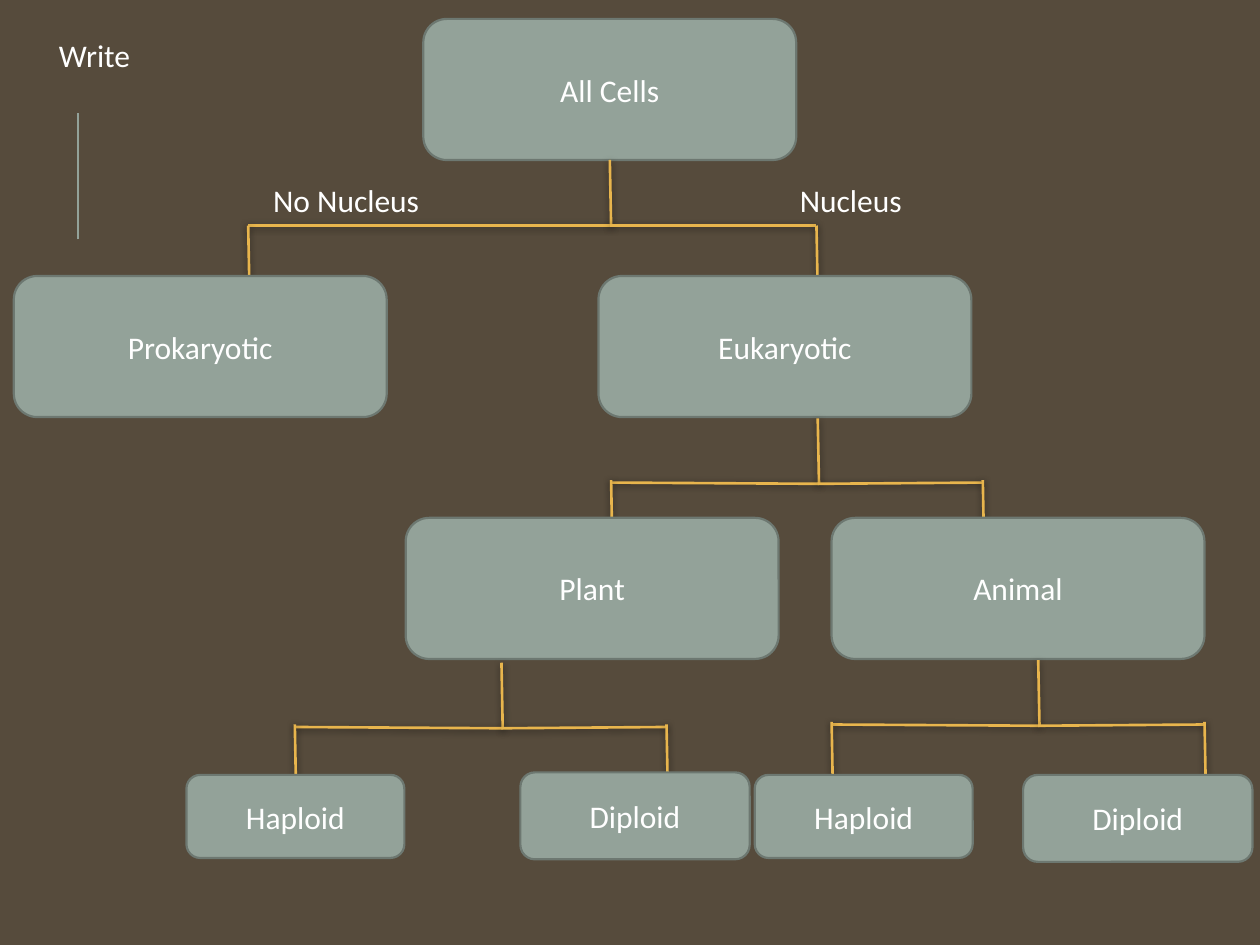
from lxml.etree import SubElement
from pptx import Presentation
from pptx.dml.color import RGBColor
from pptx.enum.shapes import MSO_CONNECTOR as CONN, MSO_SHAPE as SHAPE
from pptx.enum.text import MSO_ANCHOR as ANCHOR, MSO_AUTO_SIZE as FIT, PP_ALIGN as ALIGN
from pptx.oxml.ns import qn
from pptx.util import Inches, Pt

COLORS = {
    "background": "564B3C",
    "box": "93A299",
    "border": "6D7871",
    "branch": "E8B54D",
    "text": "FFFFFF",
    "shadow": "000000",
}
STEM = 0.52
LEAN = 0.01


def rgb(name):
    return RGBColor.from_string(COLORS[name])


def add_text(tf, text):
    p = tf.paragraphs[0]
    r = p.add_run()
    r.text = text
    r.font.name = "Calibri"
    r.font.size = Pt(18)
    r.font.color.rgb = rgb("text")
    return p


def add_box(s, text, left, top, width=2.96, height=1.12):
    sp = s.shapes.add_shape(SHAPE.ROUNDED_RECTANGLE, Inches(left), Inches(top),
                            Inches(width), Inches(height))
    sp.shadow.inherit = False
    sp.fill.solid()
    sp.fill.fore_color.rgb = rgb("box")
    sp.line.color.rgb = rgb("border")
    sp.line.width = Pt(1.25)
    tf = sp.text_frame
    tf.word_wrap = True
    tf.vertical_anchor = ANCHOR.MIDDLE
    add_text(tf, text).alignment = ALIGN.CENTER
    return sp


def add_label(s, text, left, top, width):
    tf = s.shapes.add_textbox(Inches(left), Inches(top), Inches(width), Inches(0.4)).text_frame
    tf.word_wrap = True
    tf.auto_size = FIT.SHAPE_TO_FIT_TEXT
    add_text(tf, text)


def add_line(s, start, end, color="branch", shadow=True):
    line = s.shapes.add_connector(CONN.STRAIGHT, *map(Inches, start + end))
    line.line.color.rgb = rgb(color)
    line.line.width = Pt(1.5)
    effects = SubElement(line._element.spPr, qn("a:effectLst"))
    if shadow:
        outer = SubElement(effects, qn("a:outerShdw"), blurRad=str(Pt(4)),
                           dist=str(Pt(1)), dir="5400000", rotWithShape="0")
        tint = SubElement(outer, qn("a:srgbClr"), val=COLORS["shadow"])
        SubElement(tint, qn("a:alpha"), val="50000")
    return line


def add_branch(s, x, y, left, right, sag=0.01, lift=0.03):
    """Draw a stem down from (x, y), a bar to each side and a drop at each end."""
    bar = y + STEM
    stem = add_line(s, (x, y), (x + LEAN, bar))
    add_line(s, (x + LEAN, bar), (left, bar - sag))
    add_line(s, (right, bar - sag), (x, bar))
    for drop in (left, right):
        add_line(s, (drop, bar - lift), (drop + LEAN, bar - lift + STEM))
    return stem


def main():
    prs = Presentation()
    prs.slide_width, prs.slide_height = Inches(10), Inches(7.5)
    s = prs.slides.add_slide(prs.slide_layouts[6])
    s.background.fill.solid()
    s.background.fill.fore_color.rgb = rgb("background")

    add_line(s, (0.62, 1.9), (0.62, 0.9), "box", shadow=False)
    add_label(s, "Write", 0.37, 0.24, 1.2)

    all_cells = add_box(s, "All Cells", 3.36, 0.15)
    stem = add_branch(s, 4.84, 1.27, 1.97, 6.48, sag=0, lift=0)
    stem.begin_connect(all_cells, 2)
    add_label(s, "No Nucleus", 2.07, 1.39, 2.3)
    add_label(s, "Nucleus", 6.25, 1.39, 2.3)

    add_box(s, "Prokaryotic", 0.11, 2.19)
    add_box(s, "Eukaryotic", 4.75, 2.19)
    add_branch(s, 6.49, 3.32, 4.85, 7.8)

    add_box(s, "Plant", 3.22, 4.11)
    add_box(s, "Animal", 6.6, 4.11)
    add_branch(s, 3.98, 5.26, 2.34, 5.29)
    add_branch(s, 8.24, 5.24, 6.6, 9.56)

    for haploid, diploid, diploid_top in ((1.48, 4.13, 6.13), (5.99, 8.12, 6.15)):
        add_box(s, "Haploid", haploid, 6.15, 1.73, 0.66)
        add_box(s, "Diploid", diploid, diploid_top, 1.82, 0.69)

    prs.save("out.pptx")


if __name__ == "__main__":
    main()
